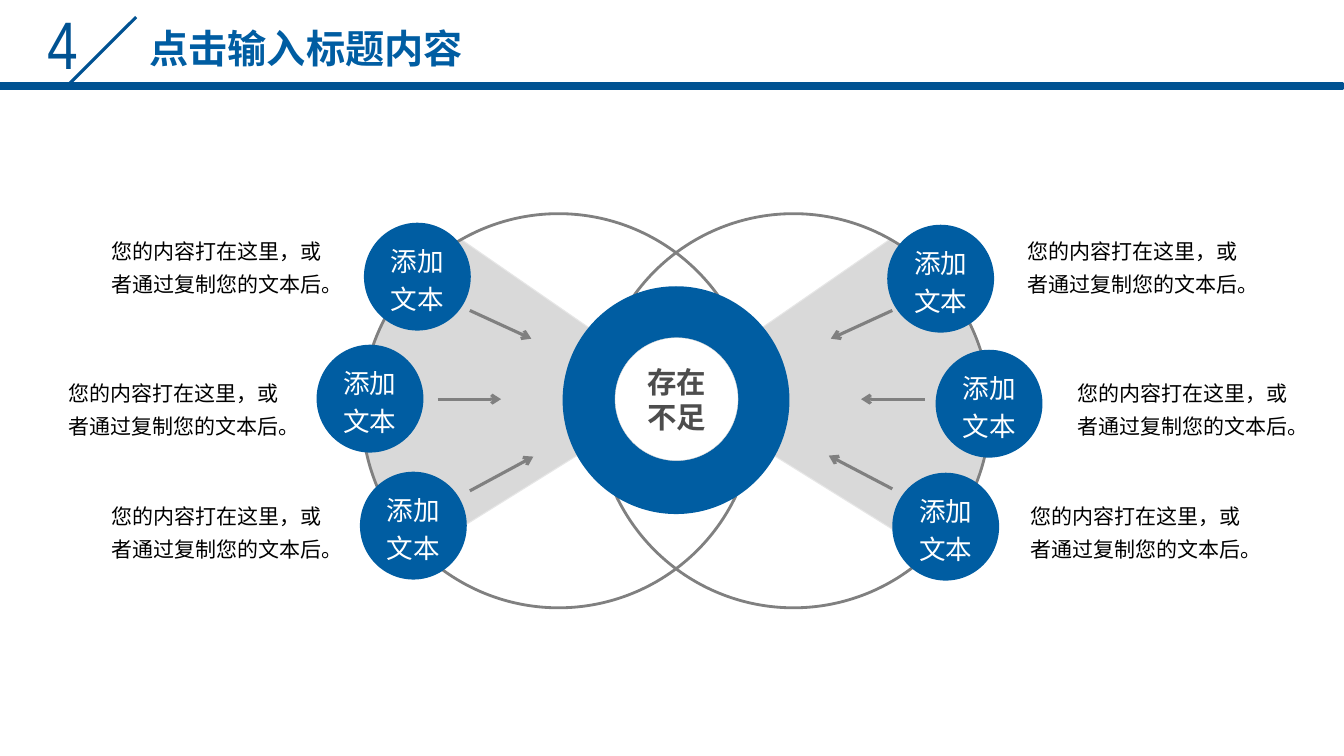
from collections import namedtuple
from lxml.etree import SubElement
from pptx import Presentation
from pptx.dml.color import RGBColor
from pptx.enum.shapes import MSO_CONNECTOR, MSO_SHAPE
from pptx.enum.text import MSO_ANCHOR, PP_ALIGN
from pptx.oxml.ns import qn
from pptx.util import Inches, Pt

Theme = namedtuple("Theme", "blue navy grey pale edge rim dark white black num head core node body")
look = Theme(*[RGBColor.from_string(c) for c in (
    "005DA2", "005292", "808080", "D9D9D9", "E6E6E6", "D7D7D7", "4D4D4D", "FFFFFF", "000000")],
    num=48, head=28, core=21, node=19, body=15)
CJK = "Noto Sans CJK SC"

deck = Presentation()
deck.slide_width, deck.slide_height = Inches(13.33), Inches(7.5)
slide = deck.slides.add_slide(deck.slide_layouts[5])
shapes = slide.shapes


def write(shape, text, size, face, color, bold=False, align=PP_ALIGN.CENTER, gap=1.0, wrap=True):
    frame = shape.text_frame
    frame.text = text
    frame.word_wrap = wrap
    frame.vertical_anchor = MSO_ANCHOR.MIDDLE
    para = frame.paragraphs[0]
    para.alignment, para.line_spacing = align, gap
    font = para.runs[0].font
    font.size, font.name, font.bold = Pt(size), face, bold
    font.color.rgb = color
    SubElement(font._element, qn("a:ea")).set("typeface", face)


def paint(shape, fill=None, line=None, width=1):
    shape.shadow.inherit = False
    if fill is None:
        shape.fill.background()
    else:
        shape.fill.solid()
        shape.fill.fore_color.rgb = fill
    if line is None:
        shape.line.fill.background()
    else:
        shape.line.color.rgb = line
        shape.line.width = Pt(width)


bar = shapes.add_shape(MSO_SHAPE.RECTANGLE, 0, Inches(0.83), Inches(13.32), Inches(0.05))
paint(bar, look.navy, look.navy, 2)
num = shapes.add_textbox(Inches(0.37), Inches(-0.03), Inches(0.5), Inches(0.91))
write(num, "4", look.num, "Arial Narrow", look.navy, align=PP_ALIGN.LEFT, wrap=False)

arcs = [
    [(9.54, 3.09), (9.23, 2.67), (9.3, 2.7), (8.82, 2.38)],
    [(9.22, 5.48), (9.85, 4.72), (9.78, 4.45), (9.81, 4.05)],
    [(9.81, 4.05), (9.79, 3.72), (9.72, 3.38), (9.54, 3.09)],
]
curves = []
for arc in arcs:
    curve = []
    for step in range(13):
        t = step / 12
        share = ((1 - t) ** 3, 3 * t * (1 - t) ** 2, 3 * t * t * (1 - t), t ** 3)
        curve.append(tuple(sum(s * p[i] for s, p in zip(share, arc)) for i in (0, 1)))
    curves.append(curve)
fan = curves[0] + [(6.65, 3.88)] + curves[1] + curves[2][1:]
for side in (1, -1):
    pts = [(Inches(6.7 + side * (x - 6.7)), Inches(y)) for x, y in fan]
    pen = shapes.build_freeform(*pts[0])
    pen.add_line_segments(pts[1:], close=True)
    paint(pen.convert_to_shape(), look.pale, look.edge, 0.75)

for left in (3.59, 5.92):
    ring = shapes.add_shape(MSO_SHAPE.OVAL, Inches(left), Inches(2.12), Inches(3.9), Inches(3.91))
    paint(ring, None, look.grey, 2)

lines = [
    (1.35, 0.17, 0.68, 0.84),
    (4.66, 3.08, 5.27, 3.36), (4.34, 3.96, 4.97, 3.96), (4.66, 4.87, 5.29, 4.53),
    (8.85, 3.08, 8.24, 3.36), (9.17, 3.96, 8.54, 3.96), (8.85, 4.85, 8.22, 4.52),
]
for rank, ends in enumerate(lines):
    link = shapes.add_connector(MSO_CONNECTOR.STRAIGHT, *map(Inches, ends))
    link.line.color.rgb = look.grey if rank else look.navy
    link.line.width = Pt(2.25)
    if rank:
        SubElement(link.line._get_or_add_ln(), qn("a:tailEnd")).set("type", "arrow")
    SubElement(link._element.spPr, qn("a:effectLst"))

disc = shapes.add_shape(MSO_SHAPE.OVAL, Inches(5.58), Inches(2.84), Inches(2.25), Inches(2.26))
paint(disc, look.blue)
core = shapes.add_shape(MSO_SHAPE.OVAL, Inches(6.1), Inches(3.35), Inches(1.22), Inches(1.22))
paint(core, look.white, look.rim, 0.25)
write(core, "存在不足", look.core, "Arial Narrow", look.dark, bold=True)

items = [
    (3.61, 2.21, 1.01, 2.24), (3.14, 3.42, 0.58, 3.65), (3.57, 4.68, 1.01, 4.87),
    (8.8, 2.23, 10.09, 2.24), (9.28, 3.47, 10.59, 3.65), (8.85, 4.69, 10.12, 4.87),
]
for left, top, col, row in items:
    node = shapes.add_shape(MSO_SHAPE.OVAL, Inches(left), Inches(top), Inches(1.06), Inches(1.07))
    paint(node, look.blue)
    write(node, "添加文本", look.node, "Arial", look.white, gap=1.2)
    note = shapes.add_textbox(Inches(col), Inches(row), Inches(2.3), Inches(0.76))
    write(note, "您的内容打在这里，或者通过复制您的文本后。", look.body, CJK, look.black,
          align=PP_ALIGN.LEFT, gap=1.3)

title = shapes.title
title.left, title.top, title.width, title.height = map(Inches, (1.24, 0.19, 3.59, 0.57))
write(title, "点击输入标题内容", look.head, CJK, look.blue, bold=True)

deck.save("out.pptx")
